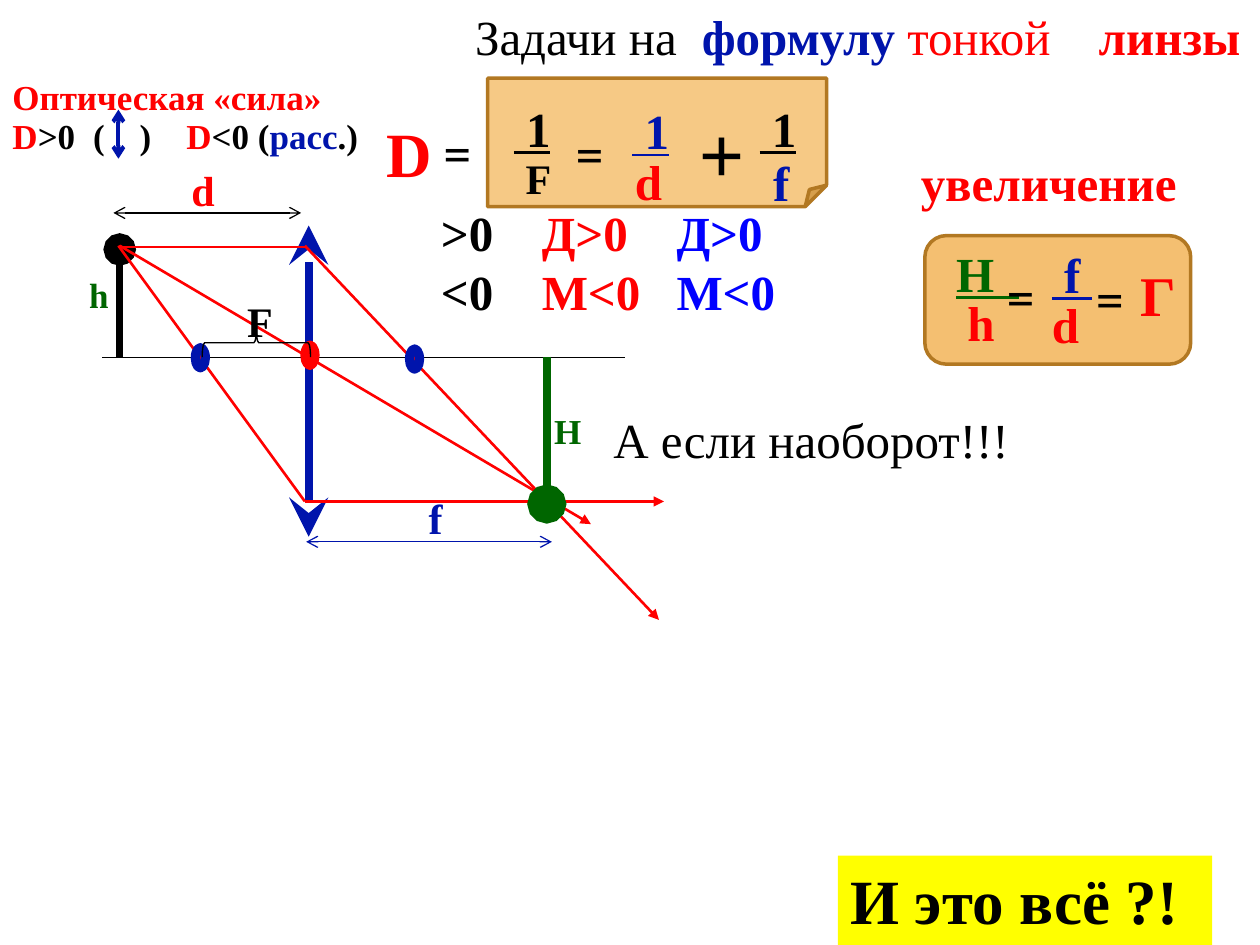
from lxml import etree
from pptx import Presentation
from pptx import util as u
from pptx.dml.color import RGBColor
from pptx.enum import shapes, text
from pptx.oxml.ns import qn

RED, BLUE, GREEN, BLACK = "FF0000", "0014AC", "006600", "000000"
SERIF = "Times New Roman"
rgb = RGBColor.from_string


def px(*nums):
    """Turn px (100 to the inch) into EMU."""
    return [u.Emu(n * 9144) for n in nums]


def write(box, rows, size, face=SERIF, bold=True, tabs=()):
    """Fill a box with rows of (text, colour) runs."""
    frame = box.text_frame
    frame.word_wrap = True
    frame.auto_size = text.MSO_AUTO_SIZE.NONE
    frame.vertical_anchor = text.MSO_ANCHOR.TOP
    for i, row in enumerate(rows):
        para = frame.add_paragraph() if i else frame.paragraphs[0]
        para.alignment = text.PP_ALIGN.LEFT
        para.font.name, para.font.size = face, u.Pt(size)
        para.font.bold = bold
        for words, tint in row:
            run = para.add_run()
            run.text = words
            run.font.color.rgb = rgb(tint)
        if tabs:
            stops = etree.Element(qn("a:tabLst"))
            for stop in px(*tabs):
                etree.SubElement(stops, qn("a:tab"), pos=str(stop), algn="l")
            para._p.get_or_add_pPr().insert(0, stops)


deck = Presentation()
deck.slide_width, deck.slide_height = px(1000, 750)
slide = deck.slides.add_slide(deck.slide_layouts[5])
parts = slide.shapes

# Heading
title = parts.title
title.left, title.top, title.width, title.height = px(367, 0, 633, 57)
write(title, [[("Задачи на\t", BLACK), ("формулу", BLUE),
               (" тонкой\t", RED), ("линзы", RED)]], 28, bold=None, tabs=(180, 495))
for run, bold in zip(title.text_frame.paragraphs[0].runs, (False, True, False, True)):
    run.font.bold = bold

# Panels behind the formulas
for kind, place, alpha in (
    (shapes.MSO_SHAPE.ROUNDED_RECTANGLE, (734, 187, 211, 102), 68),
    (shapes.MSO_SHAPE.FOLDED_CORNER, (387, 62, 269, 102), 58),
):
    panel = parts.add_shape(kind, *px(*place))
    panel.shadow.inherit = False
    panel.fill.solid()
    panel.fill.fore_color.rgb = rgb("F0A22E")
    tone = panel._element.spPr.find(qn("a:solidFill"))[0]
    etree.SubElement(tone, qn("a:alpha"), val=str(alpha * 1000))
    panel.line.color.rgb = rgb("B27822")
    panel.line.width = u.Pt(2)

# Lens, axis, rays and measures: ends, colour, width, head, tail, head size
for ends, tint, width, head, tail, size in (
    ((245, 179, 245, 426), BLUE, 4.5, "stealth", "stealth", "lg"),
    ((81, 284, 496, 284), BLACK, 0.75, None, None, "med"),
    ((95, 283, 95, 198), BLACK, 3.75, None, "oval", "lg"),
    ((242, 195, 523, 492), RED, 1.5, None, "triangle", "med"),
    ((95, 195, 469, 416), RED, 1.5, None, "triangle", "med"),
    ((242, 398, 527, 398), RED, 1.5, None, "triangle", "med"),
    ((94, 195, 242, 398), RED, 1.5, None, None, "med"),
    ((90, 169, 239, 169), BLACK, 0.75, "arrow", "arrow", "med"),
    ((243, 430, 438, 430), BLUE, 0.75, "arrow", "arrow", "med"),
    ((94, 196, 243, 196), RED, 1.5, None, None, "med"),
    ((434, 283, 434, 400), GREEN, 4.5, None, "oval", "lg"),
    ((94, 87, 94, 126), BLUE, 2.25, "arrow", "arrow", "med"),
):
    line = parts.add_connector(shapes.MSO_CONNECTOR.STRAIGHT, *px(*ends))
    line.line.color.rgb = rgb(tint)
    line.line.width = u.Pt(width)
    for tag, tip in (("a:headEnd", head), ("a:tailEnd", tail)):
        if tip:
            etree.SubElement(line.line._get_or_add_ln(), qn(tag), type=tip, w=size, len=size)
    etree.SubElement(line._element.spPr, qn("a:effectLst"))
sign = line

# Focal points and centre of the lens
for x, y, tint in ((155, 276, BLUE), (325, 277, BLUE), (242, 274, RED)):
    dot = parts.add_shape(shapes.MSO_SHAPE.OVAL, *px(x, y, 8, 16))
    dot.shadow.inherit = False
    dot.fill.solid()
    dot.fill.fore_color.rgb = rgb(RED)
    dot.line.color.rgb = rgb(tint)
    dot.line.width = u.Pt(5.25)

brace = parts.add_shape(shapes.MSO_SHAPE.RIGHT_BRACE, *px(192, 229, 23, 86))
brace.shadow.inherit = False
brace.rotation = 270
brace.fill.background()
brace.line.color.rgb = rgb(BLACK)
brace.line.width = u.Pt(0.79)

# Bold labels: place, words, colour, size, underlined as a fraction bar
for place, words, tint, size, bar in (
    ((142, 126, 55, 50), "d", RED, 24, False),
    ((322, 386, 55, 50), " f", BLUE, 24, False),
    ((430, 320, 39, 44), "H", GREEN, 20, False),
    ((61, 212, 39, 44), "h", GREEN, 20, False),
    ((178, 230, 55, 50), " F", BLACK, 24, False),
    ((758, 227, 47, 55), "h", RED, 28, False),
    ((749, 188, 70, 57), "H  ", GREEN, 28, True),
    ((825, 189, 55, 57), " f ", BLUE, 28, True),
    ((825, 229, 55, 57), "d", RED, 28, False),
    ((895, 202, 39, 64), "Г", RED, 32, False),
    ((399, 116, 63, 55), " F", BLACK, 24, False),
    ((398, 73, 55, 57), " 1", BLACK, 28, True),
    ((492, 75, 55, 57), " 1", BLUE, 28, True),
    ((494, 115, 55, 57), "d", RED, 28, False),
    ((594, 116, 63, 55), " f", BLUE, 28, False),
    ((593, 73, 55, 57), " 1", BLACK, 28, True),
    ((297, 86, 55, 71), "D", RED, 36, False),
    ((0, 55, 297, 44), "Оптическая «сила»", RED, 20, False),
    ((721, 116, 234, 57), "увеличение", RED, 28, False),
):
    label = parts.add_textbox(*px(*place))
    write(label, [[(words, tint)]], size)
    label.text_frame.paragraphs[0].font.underline = bar

# Signs of the formulas
for x, y, mark, size, face in (
    (789, 203, "=", 32, "Calibri"),
    (860, 204, "=", 32, "Calibri"),
    (447, 89, "=", 32, "Calibri"),
    (342, 88, "=", 32, "Calibri"),
    (545, 79, "+", 44, "Arial"),
):
    write(parts.add_textbox(*px(x, y, 64, 36)), [[(mark, BLACK)]], size, face, False)

# Sign rules
power = parts.add_textbox(*px(0, 86, 328, 44))
write(power, [[("D", RED), (">0\t(\t)\t", BLACK), ("D", RED), ("<0 (", BLACK),
               ("расс", BLUE), (".)", BLACK)]], 20, tabs=(64, 101, 138))
parts.add_group_shape([power, sign])

rules = parts.add_textbox(*px(320, 156, 320, 104))
rules.text_frame.margin_left = px(30)[0]
write(rules, [[(first + "\t", BLACK), (second + "\t", RED), (second, "0000FF")]
              for first, second in ((">0", "Д>0"), ("<0", "М<0"))], 28, tabs=(80, 187))

# Questions
write(parts.add_textbox(*px(477, 320, 352, 57)),
      [[("А если наоборот!!!", BLACK)]], 28, bold=False)
final = parts.add_textbox(*px(665, 679, 297, 71))
final.fill.solid()
final.fill.fore_color.rgb = rgb("FFFF00")
write(final, [[("И это всё ?!", BLACK)]], 36)

deck.save("out.pptx")
